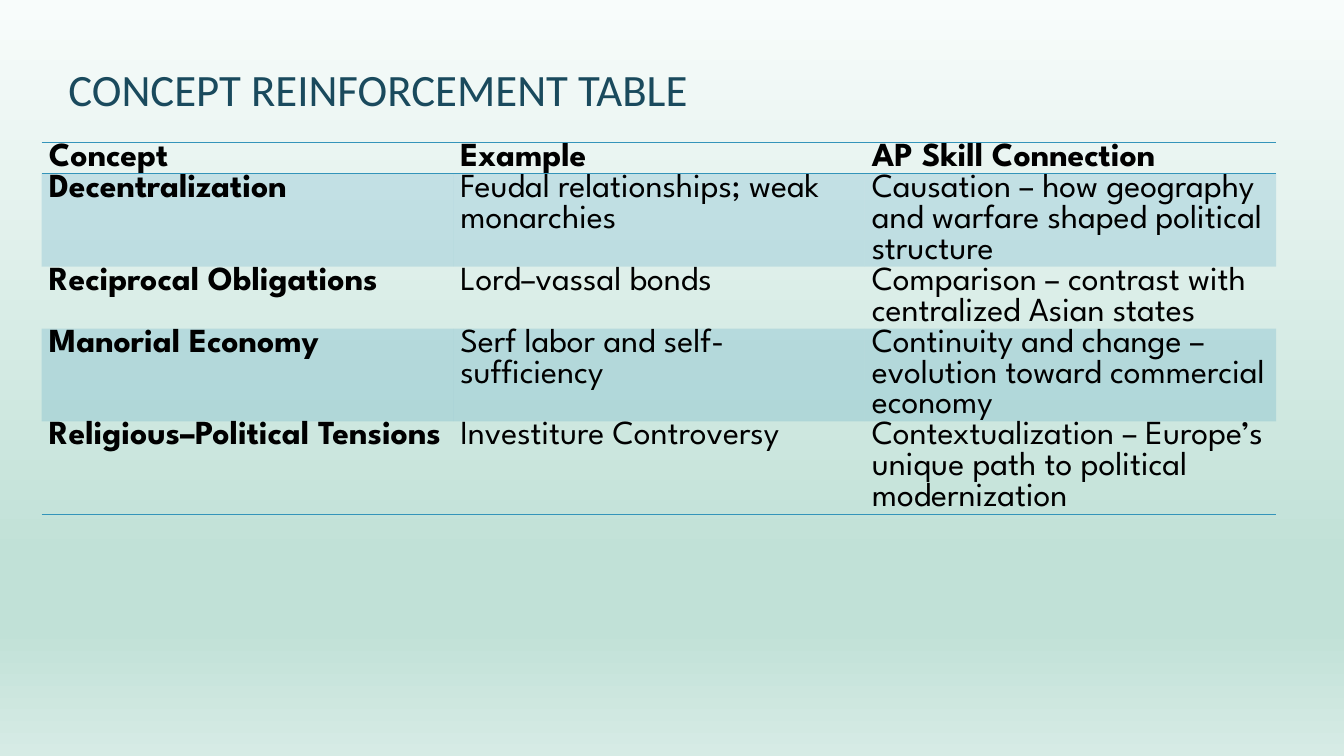
from copy import deepcopy
from lxml.etree import SubElement
from pptx import Presentation
from pptx.dml.color import RGBColor
from pptx.enum.text import MSO_ANCHOR, MSO_AUTO_SIZE, PP_ALIGN
from pptx.oxml import parse_xml
from pptx.oxml.ns import nsdecls, qn
from pptx.util import Cm, Pt

NAVY = RGBColor(0x1A, 0x4A, 0x5D)
BLUE = RGBColor(0x34, 0x94, 0xBA)
BLACK = RGBColor(0, 0, 0)
MIST = RGBColor(0xF8, 0xFC, 0xFB)
MINT = RGBColor(0xC1, 0xE1, 0xD7)
PALE = RGBColor(0xD6, 0xEB, 0xE5)
STOPS = [(0, MIST), (0.74, MINT), (0.83, MINT), (1, PALE)]
PLAIN = "{2D5ABB26-0587-4C30-8999-92F81FD0307C}"

ROWS = [
    ("Concept", "Example", "AP Skill Connection"),
    ("Decentralization", "Feudal relationships; weak monarchies",
     "Causation – how geography and warfare shaped political structure"),
    ("Reciprocal Obligations", "Lord–vassal bonds",
     "Comparison – contrast with centralized Asian states"),
    ("Manorial Economy", "Serf labor and self-sufficiency",
     "Continuity and change – evolution toward commercial economy"),
    ("Religious–Political Tensions", "Investiture Controversy",
     "Contextualization – Europe’s unique path to political modernization"),
]
LINES = [1, 3, 2, 3, 3]


class Deck:
    head = "Calibri"
    body = "League Spartan"

    def __init__(self):
        self.prs = Presentation()
        self.prs.slide_width = Cm(33.87)
        self.prs.slide_height = Cm(19.05)
        self.slide = self.prs.slides.add_slide(self.prs.slide_layouts[5])

    def backdrop(self, stops):
        fill = self.slide.background.fill
        fill.gradient()
        fill.gradient_angle = 270
        items = self.slide.element.find(".//" + qn("a:gsLst"))
        for _ in range(len(stops) - len(items)):
            items.append(deepcopy(items[0]))
        for stop, (pos, color) in zip(fill.gradient_stops, stops):
            stop.position = pos
            stop.color.rgb = color

    def add_text(self, para, text, font, size, color, bold=False):
        run = para.add_run()
        run.text = text
        run.font.name = font
        run.font.size = Pt(size)
        run.font.bold = bold
        run.font.color.rgb = color

    def title(self, text, left, top, width, height):
        shape = self.slide.shapes.title
        shape.left, shape.top = Cm(left), Cm(top)
        shape.width, shape.height = Cm(width), Cm(height)
        frame = shape.text_frame
        frame.word_wrap = True
        frame.auto_size = MSO_AUTO_SIZE.NONE
        frame.vertical_anchor = MSO_ANCHOR.BOTTOM
        para = frame.paragraphs[0]
        para.alignment = PP_ALIGN.LEFT
        para.line_spacing = 0.9
        self.add_text(para, text, self.head, 32, NAVY)

    def border(self, cell, sides):
        props = cell._tc.get_or_add_tcPr()
        for spot, side in enumerate(sides):
            props.insert(spot, parse_xml(
                f'<a:ln{side} {nsdecls("a")} w="12700"><a:solidFill>'
                f'<a:srgbClr val="{BLUE}"/></a:solidFill></a:ln{side}>'))

    def shade(self, cell):
        cell.fill.solid()
        cell.fill.fore_color.rgb = BLUE
        tint = cell._tc.tcPr.find(".//" + qn("a:srgbClr"))
        SubElement(tint, qn("a:alpha"), val="20000")

    def table(self, rows, lines, left, top, width, step):
        frame = self.slide.shapes.add_table(
            len(rows), len(rows[0]), Cm(left), Cm(top),
            Cm(width), Cm(step * sum(lines)))
        grid = frame.table
        grid._tbl.tblPr.find(qn("a:tableStyleId")).text = PLAIN
        grid.horz_banding = False
        edges = {0: "TB", len(rows) - 1: "B"}
        for r, (row, count) in enumerate(zip(rows, lines)):
            grid.rows[r].height = Cm(step * count)
            for c, text in enumerate(row):
                cell = grid.cell(r, c)
                cell.margin_left = cell.margin_right = Cm(0.18)
                cell.margin_top = cell.margin_bottom = 0
                self.add_text(cell.text_frame.paragraphs[0], text, self.body,
                              24, BLACK, r == 0 or c == 0)
                if r % 2:
                    self.shade(cell)
                else:
                    cell.fill.background()
                self.border(cell, edges.get(r, ""))


def main():
    deck = Deck()
    deck.backdrop(STOPS)
    deck.title("CONCEPT REINFORCEMENT TABLE", 1.47, 0.84, 27.74, 2.21)
    deck.table(ROWS, LINES, 1.05, 3.6, 31.11, 0.78)
    deck.prs.save("out.pptx")


if __name__ == "__main__":
    main()
